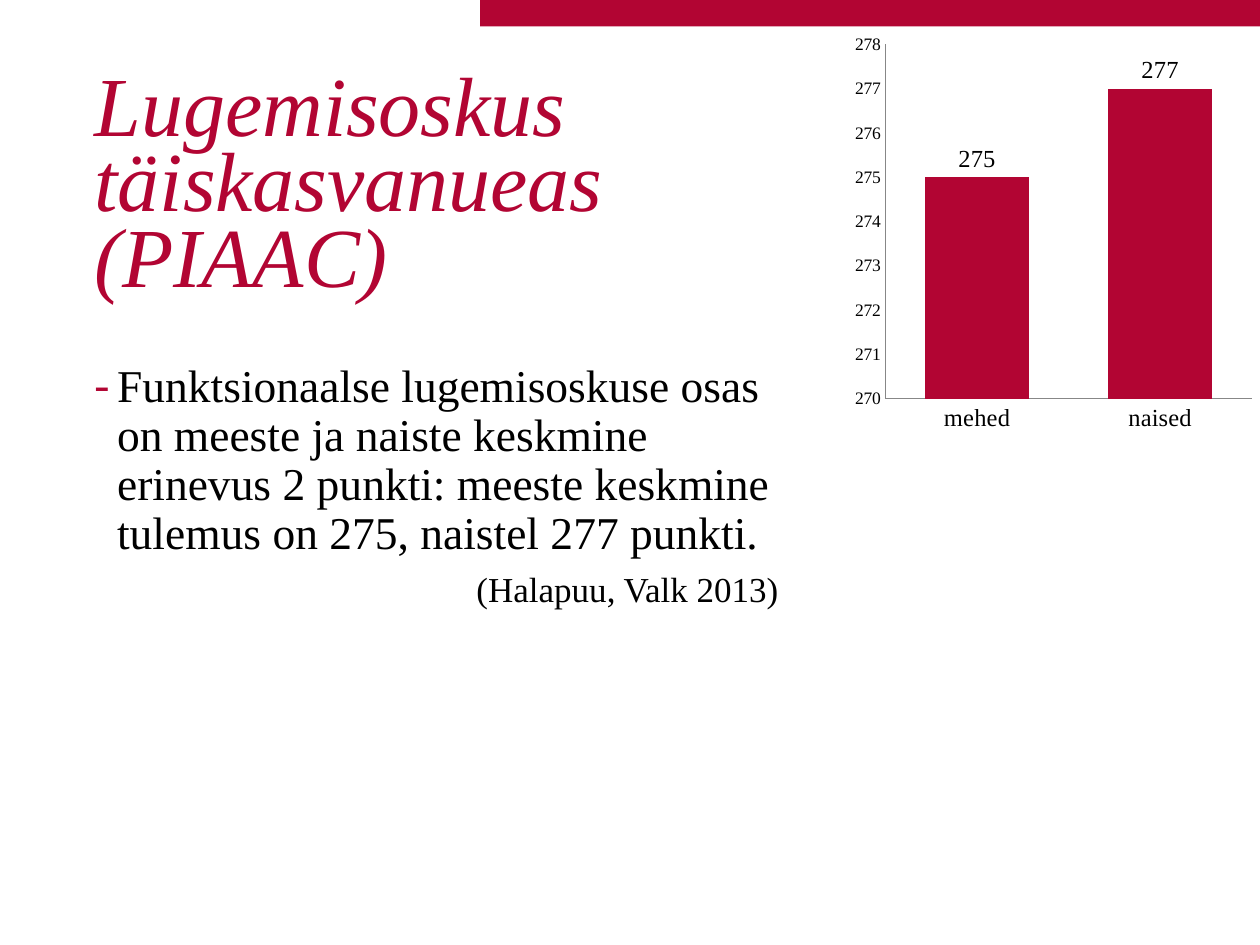
import pptx
import pptx.chart.data
import pptx.dml.color
import pptx.enum.chart
import pptx.enum.shapes
import pptx.enum.text
import pptx.util
from lxml import etree

COLORS = {"accent": "B20533", "text": "000000", "axis": "878787"}
FONT = "Times New Roman"
WIDTH, HEIGHT = 10, 7.5
MARGIN = 0.75
TEXT_WIDTH = 5.43
BAR_LEFT, BAR_HEIGHT = 3.81, 0.21
CHART_SIZE = 3.28
INDENT = 0.18


def color(name):
    return pptx.dml.color.RGBColor.from_string(COLORS[name])


def inches(*lengths):
    return [pptx.util.Inches(length) for length in lengths]


def style_font(font, size, name="text", italic=False):
    font.name = FONT
    font.size = pptx.util.Pt(size)
    font.color.rgb = color(name)
    font.bold = False
    font.italic = italic


def prepare_frame(shape):
    """Wrap the text at the top of its box, without insets."""
    frame = shape.text_frame
    frame.word_wrap = True
    frame.auto_size = pptx.enum.text.MSO_AUTO_SIZE.NONE
    frame.vertical_anchor = pptx.enum.text.MSO_ANCHOR.TOP
    frame.margin_left = frame.margin_top = frame.margin_right = frame.margin_bottom = 0
    return frame


def write_paragraph(para, text, size, spacing, name="text", italic=False,
                    align=pptx.enum.text.PP_ALIGN.LEFT, before=0):
    para.alignment = align
    para.line_spacing = spacing
    para.space_before = pptx.util.Pt(before)
    span = para.add_run()
    span.text = text
    style_font(span.font, size, name, italic)


def add_dash_bullet(para):
    properties = para._p.get_or_add_pPr()
    properties.set("marL", str(pptx.util.Inches(INDENT)))
    properties.set("indent", str(-pptx.util.Inches(INDENT)))
    tint = etree.SubElement(properties, pptx.oxml.ns.qn("a:buClr"))
    etree.SubElement(tint, pptx.oxml.ns.qn("a:srgbClr"), val=COLORS["accent"])
    etree.SubElement(properties, pptx.oxml.ns.qn("a:buFont"), typeface=FONT)
    etree.SubElement(properties, pptx.oxml.ns.qn("a:buChar"), char="-")


def add_top_bar(page):
    bar = page.shapes.add_shape(pptx.enum.shapes.MSO_SHAPE.RECTANGLE,
                                *inches(BAR_LEFT, 0, WIDTH - BAR_LEFT, BAR_HEIGHT))
    bar.shadow.inherit = False
    bar.fill.solid()
    bar.fill.fore_color.rgb = color("accent")
    bar.line.fill.background()


def set_title(page, text):
    title = page.shapes.title
    title.left, title.top, title.width, title.height = inches(MARGIN, 0.6, TEXT_WIDTH, 0.63)
    write_paragraph(prepare_frame(title).paragraphs[0], text, 48, 0.75,
                    name="accent", italic=True)


def add_body(page, statement, citation):
    box = page.shapes.add_textbox(*inches(MARGIN, 2.88, TEXT_WIDTH, 2.99))
    frame = prepare_frame(box)
    add_dash_bullet(frame.paragraphs[0])
    write_paragraph(frame.paragraphs[0], statement, 26, 0.9)
    write_paragraph(frame.add_paragraph(), citation, 20, 0.9,
                    align=pptx.enum.text.PP_ALIGN.RIGHT, before=7.5)


def style_axis(axis, size):
    axis.has_major_gridlines = False
    axis.major_tick_mark = axis.minor_tick_mark = pptx.enum.chart.XL_TICK_MARK.NONE
    axis.format.line.color.rgb = color("axis")
    axis.format.line.width = pptx.util.Pt(0.75)
    style_font(axis.tick_labels.font, size)


def add_score_chart(page, scores):
    data = pptx.chart.data.CategoryChartData()
    data.categories = list(scores)
    data.add_series("Series 1", list(scores.values()))
    chart = page.shapes.add_chart(
        pptx.enum.chart.XL_CHART_TYPE.COLUMN_CLUSTERED,
        *inches(WIDTH - CHART_SIZE, BAR_HEIGHT, CHART_SIZE, CHART_SIZE), data).chart
    chart.has_title = chart.has_legend = False
    style_font(chart.font, 10)
    style_axis(chart.category_axis, 14)
    style_axis(chart.value_axis, 10)
    chart.value_axis.minimum_scale = 270
    chart.value_axis.maximum_scale = 278
    chart.value_axis.major_unit = 1

    plot = chart.plots[0]
    plot.gap_width = 75
    plot.vary_by_categories = False
    fill = plot.series[0].format.fill
    fill.solid()
    fill.fore_color.rgb = color("accent")
    labels = plot.series[0].data_labels
    labels.show_value = True
    labels.position = pptx.enum.chart.XL_LABEL_POSITION.OUTSIDE_END
    style_font(labels.font, 14)


def main():
    deck = pptx.Presentation()
    deck.slide_width, deck.slide_height = inches(WIDTH, HEIGHT)
    page = deck.slides.add_slide(deck.slide_layouts[5])
    add_top_bar(page)
    set_title(page, "Lugemisoskus täiskasvanueas (PIAAC)")
    add_body(page,
             "Funktsionaalse lugemisoskuse osas on meeste ja naiste keskmine erinevus "
             "2 punkti: meeste keskmine tulemus on 275, naistel 277 punkti.",
             "(Halapuu, Valk 2013)")
    add_score_chart(page, {"mehed": 275, "naised": 277})
    deck.save("out.pptx")


if __name__ == "__main__":
    main()
